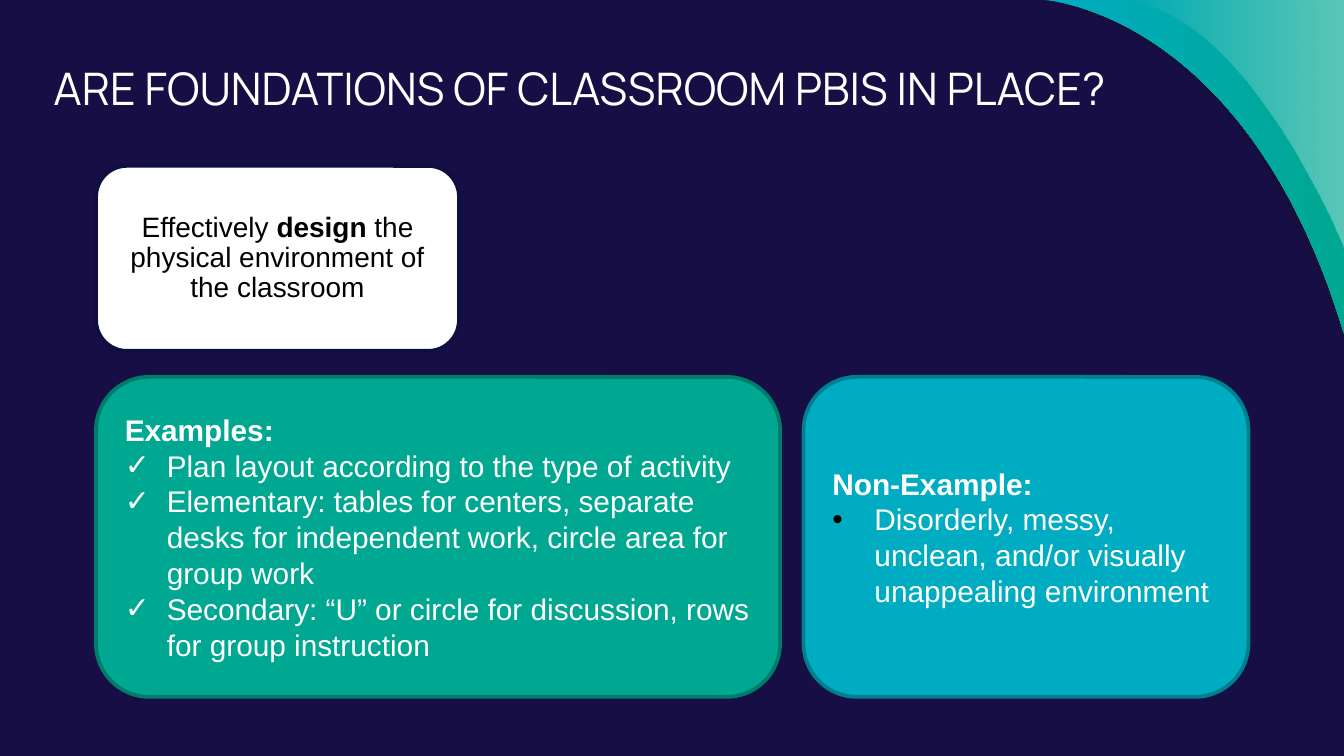
from lxml.etree import SubElement
from pptx import Presentation
from pptx.dml.color import RGBColor
from pptx.enum.shapes import MSO_SHAPE as Shape
from pptx.enum.text import MSO_ANCHOR as Anchor, PP_ALIGN as Align
from pptx.oxml.ns import qn
from pptx.util import Pt

NAVY = RGBColor(0x16, 0x0E, 0x44)
SHADE = RGBColor(0x12, 0x10, 0x2F)
INK = RGBColor(0x0D, 0x0F, 0x41)
GREEN = RGBColor(0x00, 0xA7, 0x91)
DARK_GREEN = RGBColor(0x00, 0x7C, 0x6B)
CYAN = RGBColor(0x00, 0xAC, 0xC2)
DARK_CYAN = RGBColor(0x00, 0x7F, 0x90)
WHITE = RGBColor(0xFF, 0xFF, 0xFF)
BLACK = RGBColor(0x00, 0x00, 0x00)

WIDTH, HEIGHT = 720, 405
TITLE = "ARE FOUNDATIONS OF CLASSROOM PBIS IN PLACE?"
PRACTICE = [("Effectively ", False), ("design", True),
            (" the physical environment of the classroom", False)]

# Corner swooshes: four Bézier points of the curve, then (colour, opacity %) stops
SWOOSHES = [
    ([(555.1, 0), (555.1, 0), (666.7, 5.8), (WIDTH, 182.9)], [(SHADE, 54)]),
    ([(559.4, 0), (559.4, 0), (668.2, 5.8), (WIDTH, 178.6)],
     [(CYAN, 100), (GREEN, 100)]),
    ([(602.6, 0), (670.3, 7.9), (WIDTH, 132.5), (WIDTH, 132.5)],
     [(WHITE, 0), (WHITE, 36)]),
]

PRACTICE_BOX = (51.5, 88.9, 194.4, 99.1)
PANEL_TOP, PANEL_HEIGHT = 201.9, 171.4
INDENT = 22.5
PANELS = [
    dict(left=51.4, width=366.5, fill=GREEN, line=DARK_GREEN,
         heading="Examples:", bullet="✓", bullet_color=WHITE,
         points=["Plan layout according to the type of activity",
                 "Elementary: tables for centers, separate desks for "
                 "independent work, circle area for group work",
                 "Secondary: “U” or circle for discussion, rows for group "
                 "instruction"]),
    dict(left=430.5, width=238.3, fill=CYAN, line=DARK_CYAN,
         heading="Non-Example:", bullet="•", bullet_color=BLACK,
         points=["Disorderly, messy, unclean, and/or visually unappealing "
                 "environment"]),
]


def curve_first_side(outline):
    """Turn the first three line segments of a freeform into one Bézier curve."""
    path = next(outline.element.iter(qn("a:path")))
    lines = path.findall(qn("a:lnTo"))[:3]
    curve = SubElement(path, qn("a:cubicBezTo"))
    lines[0].addprevious(curve)
    for line in lines:
        curve.append(line[0])
        path.remove(line)


def add_swoosh(slide, controls, stops):
    corners = [(Pt(x), Pt(y)) for x, y in controls + [(WIDTH, 0)]]
    builder = slide.shapes.build_freeform(*corners[0])
    builder.add_line_segments(corners[1:], close=True)
    swoosh = builder.convert_to_shape()
    curve_first_side(swoosh)
    swoosh.shadow.inherit = False
    swoosh.line.fill.background()
    if len(stops) == 1:
        swoosh.fill.solid()
        swoosh.fill.fore_color.rgb = stops[0][0]
    else:
        swoosh.fill.gradient()
        swoosh.fill.gradient_angle = 0
        for stop, (color, _) in zip(swoosh.fill.gradient_stops, stops):
            stop.color.rgb = color
    fill_colors = list(swoosh.element.spPr.iter(qn("a:srgbClr")))
    for fill_color, (_, opacity) in zip(fill_colors, stops):
        if opacity < 100:
            SubElement(fill_color, qn("a:alpha"), val=str(opacity * 1000))


def add_card(slide, box, fill, line):
    """Add a rounded rectangle and return its text frame."""
    card = slide.shapes.add_shape(Shape.ROUNDED_RECTANGLE, *map(Pt, box))
    card.shadow.inherit = False
    card.fill.solid()
    card.fill.fore_color.rgb = fill
    card.line.color.rgb = line
    card.line.width = Pt(2)
    frame = card.text_frame
    frame.word_wrap = True
    frame.vertical_anchor = Anchor.MIDDLE
    return frame


def set_font(paragraph, name, size, color, bold=None):
    font = paragraph.font
    font.name, font.size, font.bold = name, Pt(size), bold
    font.color.rgb = color


def add_bullet(paragraph, mark, color):
    props = paragraph._p.get_or_add_pPr()
    props.set("marL", str(Pt(INDENT)))
    props.set("indent", str(-Pt(INDENT)))
    bullet_color = SubElement(props, qn("a:buClr"))
    SubElement(bullet_color, qn("a:srgbClr"), val=str(color))
    SubElement(props, qn("a:buFont"), typeface="Arial")
    SubElement(props, qn("a:buChar"), char=mark)


def add_panel(slide, panel):
    box = (panel["left"], PANEL_TOP, panel["width"], PANEL_HEIGHT)
    frame = add_card(slide, box, panel["fill"], panel["line"])
    heading = frame.paragraphs[0]
    heading.text = panel["heading"]
    heading.alignment = Align.LEFT
    set_font(heading, "Arial", 16, WHITE, bold=True)
    for text in panel["points"]:
        point = frame.add_paragraph()
        point.text = text
        point.alignment = Align.LEFT
        add_bullet(point, panel["bullet"], panel["bullet_color"])
        set_font(point, "Arial", 16, WHITE)


def add_practice(slide):
    practice = add_card(slide, PRACTICE_BOX, WHITE, INK).paragraphs[0]
    practice.alignment = Align.CENTER
    practice.line_spacing = 0.9
    set_font(practice, "Arial", 15, BLACK)
    for text, bold in PRACTICE:
        run = practice.add_run()
        run.text = text
        run.font.bold = bold


def add_title(slide):
    frame = slide.shapes.add_textbox(Pt(21.6), Pt(25.2), Pt(636.5), Pt(49.7)).text_frame
    frame.word_wrap = True
    frame.margin_top = frame.margin_bottom = Pt(7.2)
    title = frame.paragraphs[0]
    title.text = TITLE
    set_font(title, "Manrope", 24, WHITE)


def main():
    deck = Presentation()
    deck.slide_width, deck.slide_height = Pt(WIDTH), Pt(HEIGHT)
    slide = deck.slides.add_slide(deck.slide_layouts[6])
    slide.background.fill.solid()
    slide.background.fill.fore_color.rgb = NAVY
    for controls, stops in SWOOSHES:
        add_swoosh(slide, controls, stops)
    add_practice(slide)
    for panel in PANELS:
        add_panel(slide, panel)
    add_title(slide)
    deck.save("out.pptx")


if __name__ == "__main__":
    main()
